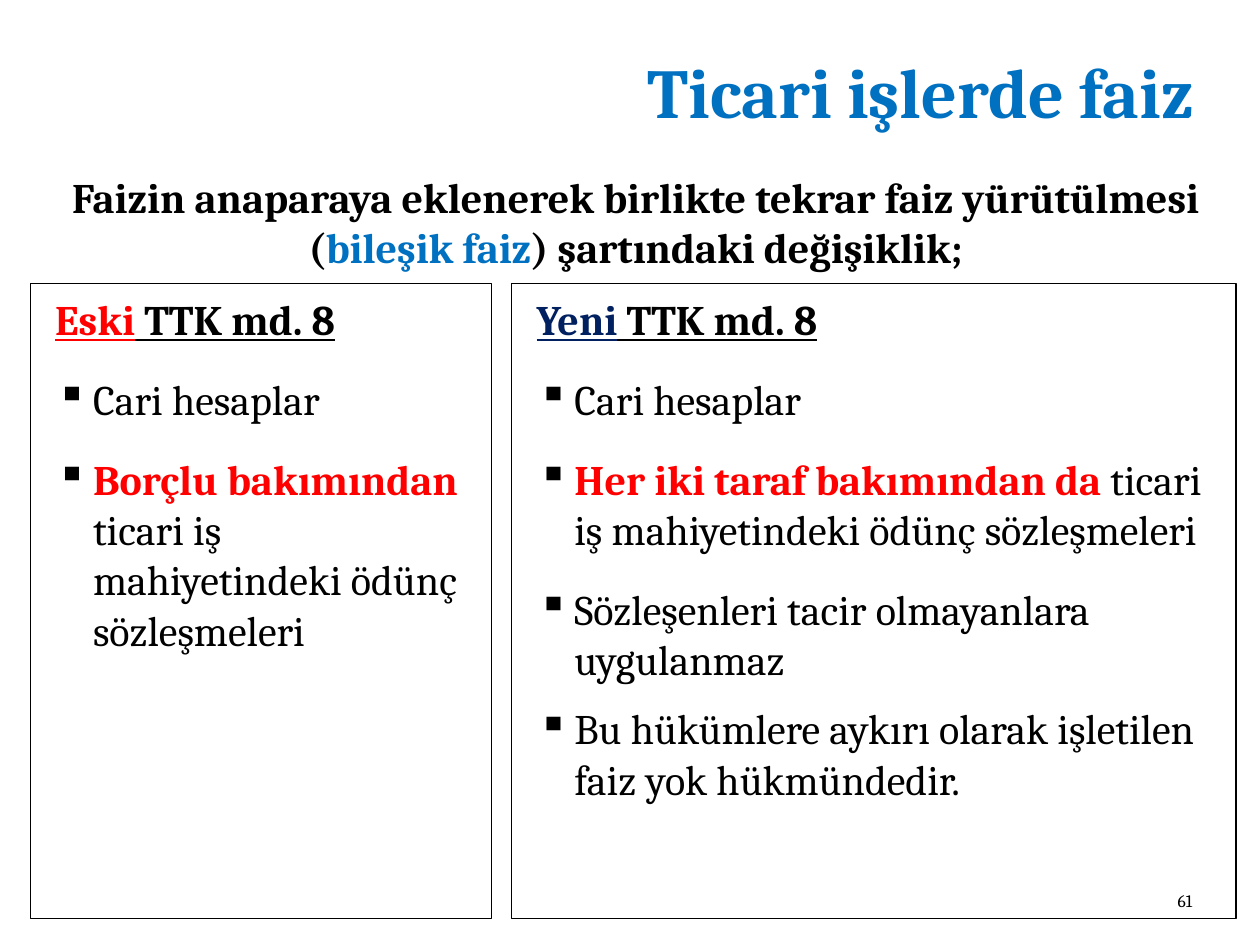
from dataclasses import dataclass
from lxml.etree import SubElement as Sub
from pptx import Presentation
from pptx.dml.color import RGBColor as Rgb
from pptx.enum.shapes import MSO_SHAPE as Shape
from pptx.enum.text import MSO_ANCHOR as Anchor, PP_ALIGN as Align
from pptx.oxml.ns import qn
from pptx.util import Inches, Pt


@dataclass(frozen=True)
class Theme:
    face: str = "Cambria"
    black: str = "000000"
    blue: str = "0070C0"
    navy: str = "002060"
    red: str = "FF0000"
    title: int = 40
    body: int = 24
    small: int = 10


class Deck:
    """Draw text and framed lists on one slide in a shared style."""

    def __init__(self, theme):
        self.theme = theme
        self.prs = Presentation()
        self.prs.slide_width, self.prs.slide_height = Inches(10), Inches(7.5)
        self.slide = self.prs.slides.add_slide(self.prs.slide_layouts[6])

    def fill(self, para, runs, size, bold=None, line=None):
        font = para.font
        font.name, font.size = self.theme.face, Pt(size)
        font.bold, font.underline = bold, line
        for text, color, *heavy in runs:
            run = para.add_run()
            run.text = text
            run.font.color.rgb = Rgb.from_string(color)
            if heavy:
                run.font.bold = heavy[0]

    def text(self, box, runs, size, align, anchor=Anchor.TOP, bold=False):
        frame = self.slide.shapes.add_textbox(*map(Inches, box)).text_frame
        frame.word_wrap = True
        frame.vertical_anchor = anchor
        para = frame.paragraphs[0]
        para.alignment = align
        self.fill(para, runs, size, bold)

    def indent(self, para, left, hang=0.0, mark=None):
        props = para._p.get_or_add_pPr()
        props.set("marL", str(Inches(left)))
        props.set("indent", str(Inches(hang)))
        if mark:
            color = Sub(props, qn("a:buClr"))
            Sub(color, qn("a:srgbClr"), val=self.theme.black)
            Sub(props, qn("a:buChar"), char=mark)

    def panel(self, left, width, head, items):
        box = map(Inches, (left, 2.25, width, 5.04))
        shape = self.slide.shapes.add_shape(Shape.RECTANGLE, *box)
        shape.shadow.inherit = False
        shape.fill.background()
        shape.line.color.rgb = Rgb.from_string(self.theme.black)
        shape.line.width = Pt(0.75)
        frame = shape.text_frame
        frame.word_wrap = True
        frame.vertical_anchor = Anchor.TOP
        frame.margin_top = Inches(0.08)
        para = frame.paragraphs[0]
        para.alignment = Align.LEFT
        para.space_after = Pt(12)
        self.indent(para, 0.1)
        self.fill(para, head, self.theme.body, True, True)
        for after, runs in items:
            para = frame.add_paragraph()
            para.alignment = Align.LEFT
            para.space_before, para.space_after = Pt(4.8), Pt(after)
            self.indent(para, 0.4, -0.29, "▪")
            self.fill(para, runs, self.theme.body)

    def save(self):
        self.prs.save("out.pptx")


def main():
    look = Theme()
    deck = Deck(look)
    black, blue, red = look.black, look.blue, look.red
    law = (" TTK md. 8", black)
    loan = ("ticari iş mahiyetindeki ödünç sözleşmeleri", black)
    accts = (12, [("Cari hesaplar", black)])

    deck.text((1.14, 0.25, 8.43, 0.94), [("Ticari işlerde faiz", blue)],
              look.title, Align.RIGHT, Anchor.MIDDLE, True)
    deck.panel(0.24, 3.66, [("Eski", red), law], [
        accts,
        (12, [("Borçlu bakımından ", red, True), loan]),
    ])
    deck.panel(4.06, 5.75, [("Yeni", look.navy), law], [
        accts,
        (12, [("Her iki taraf bakımından da ", red, True), loan]),
        (6, [("Sözleşenleri tacir olmayanlara uygulanmaz", black)]),
        (6, [("Bu hükümlere aykırı olarak işletilen faiz yok hükmündedir.",
              black)]),
    ])
    deck.text((0.28, 1.31, 9.53, 0.91), [
        ("Faizin anaparaya eklenerek birlikte tekrar faiz yürütülmesi (", black),
        ("bileşik faiz", blue),
        (") şartındaki değişiklik;", black),
    ], look.body, Align.CENTER, bold=True)
    deck.text((7.48, 6.9, 2.08, 0.38), [("61", black)],
              look.small, Align.RIGHT, Anchor.BOTTOM)
    deck.save()


if __name__ == "__main__":
    main()
